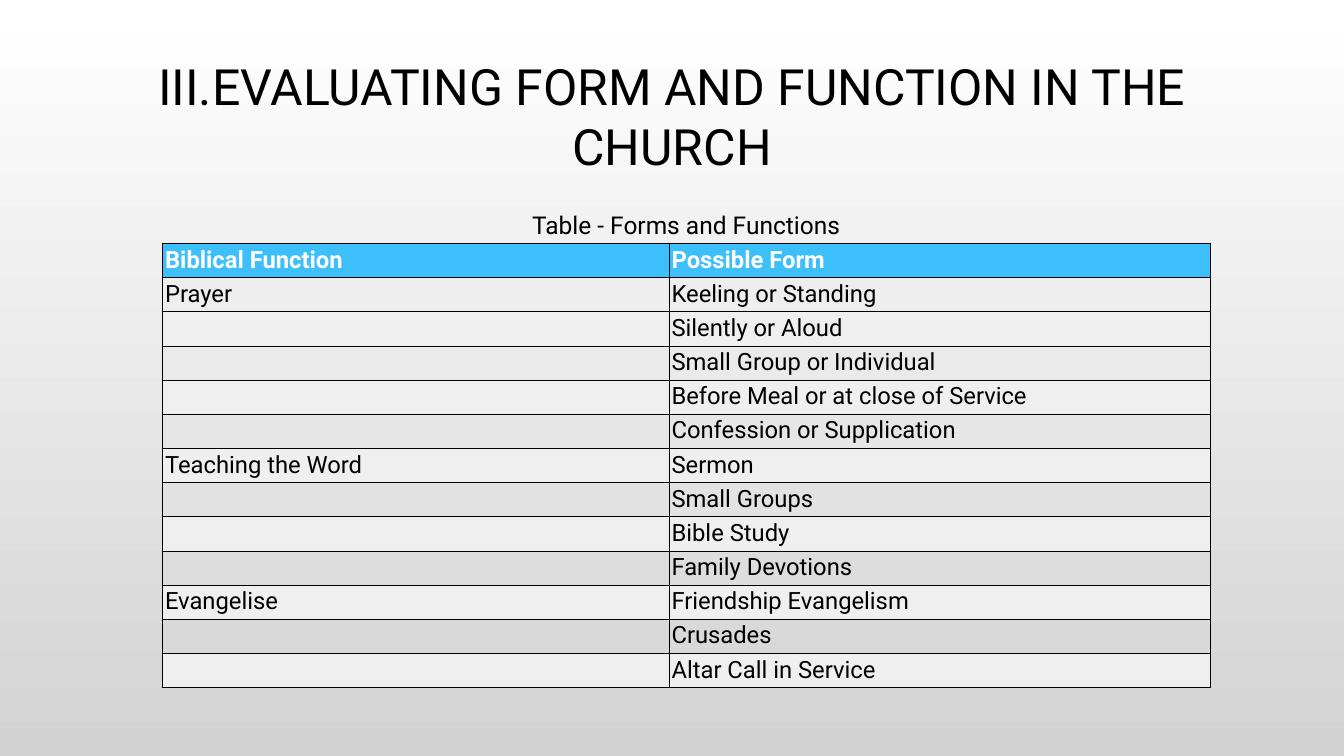
from dataclasses import dataclass

import lxml.etree
import pptx
import pptx.dml.color
import pptx.enum.text
import pptx.oxml.ns
import pptx.util

Pt = pptx.util.Pt
RGBColor = pptx.dml.color.RGBColor
Align = pptx.enum.text.PP_ALIGN
Anchor = pptx.enum.text.MSO_ANCHOR
qn = pptx.oxml.ns.qn

BLACK = RGBColor(0x00, 0x00, 0x00)
WHITE = RGBColor(0xFF, 0xFF, 0xFF)
SILVER = RGBColor(0xD3, 0xD3, 0xD3)
SKY_BLUE = RGBColor(0x3D, 0xBF, 0xFC)
BAND_GREY = RGBColor(0xEF, 0xEF, 0xEF)

INSET = Pt(4)
MARGINS = {f"margin_{side}": INSET for side in ("left", "top", "right", "bottom")}
THIN, THICK = Pt(0.25), Pt(1)
PLAIN_TABLE_STYLE = "{2D5ABB26-0587-4C30-8999-92F81FD0307C}"

TITLE_FONT = {"name": "Roboto", "size": Pt(71.4)}
CAPTION_FONT = {"name": "Roboto", "size": Pt(35)}
BODY_FONT = {"name": "Roboto", "size": Pt(34)}
HEADER_FONT = BODY_FONT | {"bold": True}


@dataclass(frozen=True)
class ChurchFunction:
    name: str
    forms: tuple[str, ...]


FUNCTIONS = (
    ChurchFunction("Prayer", (
        "Keeling or Standing", "Silently or Aloud", "Small Group or Individual",
        "Before Meal or at close of Service", "Confession or Supplication")),
    ChurchFunction("Teaching the Word", (
        "Sermon", "Small Groups", "Bible Study", "Family Devotions")),
    ChurchFunction("Evangelise", (
        "Friendship Evangelism", "Crusades", "Altar Call in Service")),
)


def apply_format(target, values: dict) -> None:
    for name, value in values.items():
        setattr(target, name, value)


def write(paragraph, text: str, font: dict, color: RGBColor = BLACK) -> None:
    run = paragraph.add_run()
    run.text = text
    apply_format(run.font, font)
    run.font.color.rgb = color


def set_borders(cell, **widths: int) -> None:
    """Draw black borders; the keywords are L, R, T and B, in that order."""
    properties = cell._tc.get_or_add_tcPr()
    for side, width in widths.items():
        line = lxml.etree.SubElement(properties, qn(f"a:ln{side}"), w=str(width))
        fill = lxml.etree.SubElement(line, qn("a:solidFill"))
        lxml.etree.SubElement(fill, qn("a:srgbClr"), val=str(BLACK))


def fill_cell(cell, text: str, font: dict, color: RGBColor = BLACK,
              background: RGBColor | None = None) -> None:
    apply_format(cell, MARGINS)
    if background is None:
        cell.fill.background()
    else:
        cell.fill.solid()
        cell.fill.fore_color.rgb = background
    if text:
        write(cell.text_frame.paragraphs[0], text, font, color)


def paint_background(slide) -> None:
    fill = slide.background.fill
    fill.gradient()
    fill.gradient_angle = 270
    for stop, color in zip(fill.gradient_stops, (WHITE, SILVER)):
        stop.color.rgb = color


def add_title(slide) -> None:
    frame = slide.shapes.add_textbox(Pt(133.2), Pt(74.9), Pt(1653.8), Pt(180)).text_frame
    apply_format(frame, MARGINS | {"word_wrap": True, "vertical_anchor": Anchor.MIDDLE})
    title = frame.paragraphs[0]
    title.alignment = Align.CENTER
    numbering = title._p.get_or_add_pPr()
    apply_format(numbering, {"marL": Pt(116.6), "indent": -Pt(116.6)})
    lxml.etree.SubElement(numbering, qn("a:buFont"), typeface="Roboto")
    lxml.etree.SubElement(numbering, qn("a:buAutoNum"), type="romanUcPeriod", startAt="3")
    write(title, "EVALUATING FORM AND FUNCTION IN THE CHURCH", TITLE_FONT)


def add_forms_table(slide) -> None:
    row_count = 2 + sum(len(function.forms) for function in FUNCTIONS)
    column_widths = (Pt(723.6), Pt(773.3))
    caption_height, row_height = Pt(49.7), Pt(47.8)
    table = slide.shapes.add_table(
        row_count, 2, Pt(231.8), Pt(297.4), sum(column_widths),
        caption_height + row_height * (row_count - 1)).table
    apply_format(table, {"first_row": False, "horz_banding": False})
    table._tbl.tblPr.find(qn("a:tableStyleId")).text = PLAIN_TABLE_STYLE
    for column, width in zip(table.columns, column_widths):
        column.width = width
    for row in table.rows:
        row.height = row_height
    table.rows[0].height = caption_height

    caption = table.cell(0, 0)
    caption.merge(table.cell(0, 1))
    set_borders(caption, B=THIN)
    fill_cell(caption, "Table - Forms and Functions", CAPTION_FONT)
    caption.vertical_anchor = Anchor.MIDDLE
    caption.text_frame.paragraphs[0].alignment = Align.CENTER

    for column, heading in enumerate(("Biblical Function", "Possible Form")):
        header = table.cell(1, column)
        set_borders(header, L=THIN, R=THIN, T=THIN, B=THICK)
        fill_cell(header, heading, HEADER_FONT, WHITE, SKY_BLUE)

    row = 2
    for function in FUNCTIONS:
        for position, form in enumerate(function.forms):
            first, last = position == 0, position == len(function.forms) - 1
            edges = {"T": THICK if first else THIN, "B": THICK if last else THIN}
            band = BAND_GREY if row % 2 else None
            function_cell, form_cell = table.cell(row, 0), table.cell(row, 1)
            set_borders(function_cell, L=THICK, R=THIN, **edges)
            set_borders(form_cell, L=THIN, R=THICK, **edges)
            fill_cell(function_cell, function.name if first else "", BODY_FONT, background=band)
            fill_cell(form_cell, form, BODY_FONT, background=band)
            row += 1


def main() -> None:
    presentation = pptx.Presentation()
    apply_format(presentation, {"slide_width": Pt(1920), "slide_height": Pt(1080)})
    slide = presentation.slides.add_slide(presentation.slide_layouts[6])
    paint_background(slide)
    add_title(slide)
    add_forms_table(slide)
    presentation.save("out.pptx")


if __name__ == "__main__":
    main()
